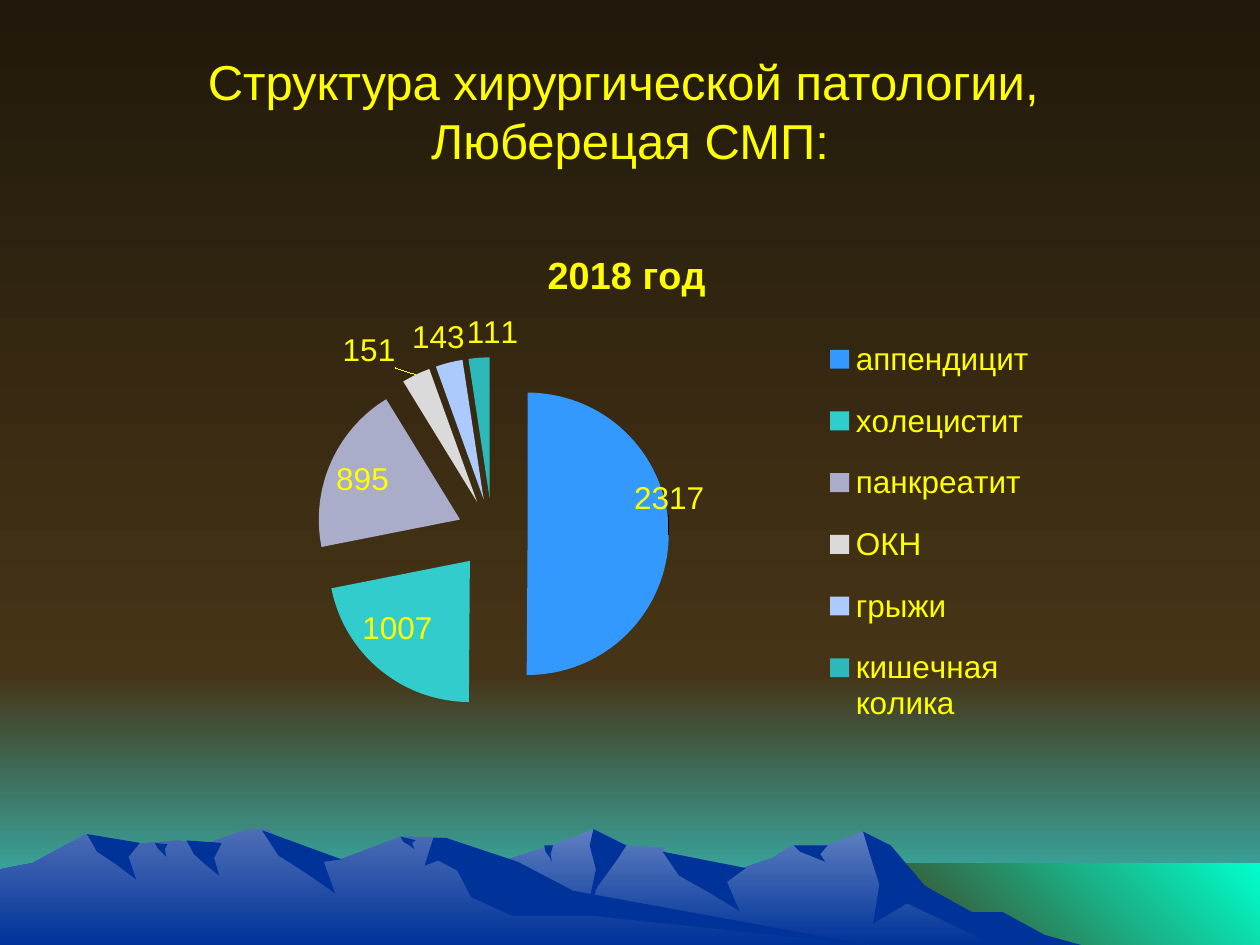
from lxml import etree
from pptx import Presentation
from pptx import util as u
from pptx.chart.data import CategoryChartData
from pptx.dml.color import RGBColor
from pptx.enum import chart as ch, text
from pptx.oxml.ns import qn

PX = 9144  # 100 px to the inch
WIDTH, HEIGHT = 1000, 750
HORIZON = 533
FONT = "Arial"
YELLOW, NAVY = "FFFF00", "003399"
SKY = ("21190B", "463416")
GROUND = ("463416", "33CCCC")
GLOW = ("463416", "00FFCC")
FAR_BLUE = ("5F7FC0", NAVY)
NEAR_BLUE = ("4E6EB6", NAVY)

# Skylines from left to right: peaks, valleys and the ends on the floor
FAR_SKYLINE = [(258, 750), (327, 709), (394, 685), (438, 671), (471, 658), (497, 671),
               (526, 673), (536, 690), (566, 697), (613, 681), (629, 671), (656, 671),
               (685, 660), (723, 698), (820, 750)]
NEAR_SKYLINE = [(0, 750), (0, 690), (26, 685), (68, 662), (94, 671), (143, 667), (160, 671),
                (196, 658), (212, 658), (236, 681), (271, 682), (318, 664), (354, 665),
                (432, 712), (690, 750)]

# Shaded faces: from the summit down the lit edge, then back up the far slope
EAST_FACE = [(685, 660), (691, 680), (698, 702), (693, 733), (720, 717), (790, 750),
             (858, 750), (829, 742), (796, 724), (771, 724), (734, 703), (707, 671)]
MIDDLE_FACE = [(471, 658), (468, 671), (473, 690), (465, 727), (474, 704), (490, 682),
               (497, 671)]
LONG_SPUR = [(344, 665), (337, 687), (348, 683), (363, 691), (374, 712), (407, 727),
             (472, 727), (690, 750), (455, 707), (411, 684), (354, 665)]

# Gullies: x, y, width, height, and how far the ridge drops along the top
FAR_GULLIES = [(526, 676, 66, 47, 13), (630, 671, 27, 13, 0), (432, 671, 7, 13, 0)]
NEAR_GULLIES = [(208, 659, 63, 50, 23), (318, 664, 12, 10, 3), (148, 667, 28, 28, 2),
                (123, 669, 10, 11, 1), (69, 662, 42, 36, 7)]

PATIENTS = {
    "аппендицит": (2317, "3399FF"),
    "холецистит": (1007, "33CCCC"),
    "панкреатит": (895, "AAADCA"),
    "ОКН": (151, "DADADA"),
    "грыжи": (143, "ADCAFF"),
    "кишечная колика": (111, "2DB9B9"),
}


def rgb(value):
    return RGBColor.from_string(value)


def manual_layout(**fractions):
    """Return a c:layout element with the given edge and size fractions."""
    layout = etree.Element(qn("c:layout"))
    manual = etree.SubElement(layout, qn("c:manualLayout"))
    for tag, val in fractions.items():
        etree.SubElement(manual, qn("c:" + tag)).set("val", str(val))
    return layout


class Deck:
    def __init__(self):
        self.prs = Presentation()
        self.prs.slide_width, self.prs.slide_height = WIDTH * PX, HEIGHT * PX
        self.s = self.prs.slides.add_slide(self.prs.slide_layouts[5])

    def background(self, color):
        fill = self.s.background.fill
        fill.solid()
        fill.fore_color.rgb = rgb(color)

    def style(self, font, size, bold=False):
        font.name, font.size, font.bold = FONT, u.Pt(size), bold
        font.color.rgb = rgb(YELLOW)

    def paint(self, sp, fill, angle):
        """Fill with one colour, or a gradient whose angle runs clockwise."""
        if isinstance(fill, str):
            sp.fill.solid()
            sp.fill.fore_color.rgb = rgb(fill)
        else:
            sp.fill.gradient()
            sp.fill.gradient_angle = 360 - angle
            for stop, color in zip(sp.fill.gradient_stops, fill):
                stop.color.rgb = rgb(color)
        sp.line.fill.background()
        sp.shadow.inherit = False

    def outline(self, points, fill=NAVY, angle=90):
        builder = self.s.shapes.build_freeform(*points[0], scale=PX)
        builder.add_line_segments(points[1:], close=True)
        self.paint(builder.convert_to_shape(), fill, angle)

    def band(self, x, y, w, h, fill, angle=90):
        self.outline([(x, y), (x + w, y), (x + w, y + h), (x, y + h)], fill, angle)

    def gully(self, x, y, w, h, drop):
        """Shade a wedge that hangs from the ridge and ends in a low right tip."""
        inner = [(0.78, 0.5), (0.92, 1), (0.55, 0.68), (0.2, 0.4)]
        self.outline([(x, y), (x + w, y + drop)]
                     + [(round(x + fx * w), round(y + max(fy * h, fx * drop)))
                        for fx, fy in inner])

    def mountains(self, skyline, fill, faces, gullies):
        self.outline(skyline, fill)
        for face in faces:
            self.outline(face)
        for gully in gullies:
            self.gully(*gully)

    def title(self, x, y, w, h, words, size):
        sp = self.s.shapes.title
        sp.left, sp.top, sp.width, sp.height = (v * PX for v in (x, y, w, h))
        tf = sp.text_frame
        tf.text = words
        tf.word_wrap = True
        tf.vertical_anchor = text.MSO_ANCHOR.MIDDLE
        p = tf.paragraphs[0]
        p.alignment = text.PP_ALIGN.CENTER
        for r in p.runs:
            self.style(r.font, size)
        # Keep the title above the scenery
        self.s.shapes._spTree.append(sp._element)

    def pie(self, x, y, w, h, heading, slices, size):
        data = CategoryChartData()
        data.categories = list(slices)
        data.add_series("Series 1", [value for value, _ in slices.values()])
        box = (v * PX for v in (x, y, w, h))
        chart = self.s.shapes.add_chart(ch.XL_CHART_TYPE.PIE, *box, data).chart
        self.style(chart.font, size)

        chart.has_title = True
        tf = chart.chart_title.text_frame
        tf.text = heading
        self.style(tf.paragraphs[0].runs[0].font, 21.6, bold=True)

        chart.has_legend = True
        legend = chart.legend
        legend.position = ch.XL_LEGEND_POSITION.RIGHT
        legend.include_in_layout = False
        self.style(legend.font, size)
        legend._element.find(qn("c:legendPos")).addnext(manual_layout(
            xMode="edge", yMode="edge", x=0.73, y=0.17, w=0.26, h=0.83))

        plot = chart.plots[0]
        plot.vary_by_categories = True
        series = plot.series[0]
        explosion = etree.Element(qn("c:explosion"), val="25")
        series._element.find(qn("c:tx")).addnext(explosion)
        for i, (_, color) in enumerate(slices.values()):
            fill = series.points[i].format.fill
            fill.solid()
            fill.fore_color.rgb = rgb(color)

        labels = series.data_labels
        labels.show_value = True
        first = series.points[0].data_label
        for label in (labels, first):
            label.position = ch.XL_LABEL_POSITION.BEST_FIT
            self.style(label.font, size)
        # The largest slice carries its label across its rim
        first._dLbl.find(qn("c:idx")).addnext(manual_layout(x=-0.05, y=-0.07))

        area = chart._chartSpace.chart.plotArea
        for old in area.findall(qn("c:layout")):
            area.remove(old)
        area.insert(0, manual_layout(layoutTarget="inner", xMode="edge", yMode="edge",
                                     x=0.13, y=0.25, w=0.42, h=0.68))


def main():
    deck = Deck()
    deck.background("00194C")
    deck.band(0, HORIZON, WIDTH, HEIGHT - HORIZON, GROUND)
    deck.band(0, 0, WIDTH, HORIZON, SKY)
    deck.band(683, 685, WIDTH - 683, HEIGHT - 685, GLOW, 315)
    deck.mountains(FAR_SKYLINE, FAR_BLUE, [EAST_FACE, MIDDLE_FACE], FAR_GULLIES)
    deck.mountains(NEAR_SKYLINE, NEAR_BLUE, [LONG_SPUR], NEAR_GULLIES)
    deck.title(50, 25, 900, 125, "Структура хирургической патологии, \vЛюберецая СМП:", 28)
    deck.pie(164, 180, 667, 413, "2018 год", PATIENTS, 18)
    deck.prs.save("out.pptx")


if __name__ == "__main__":
    main()
